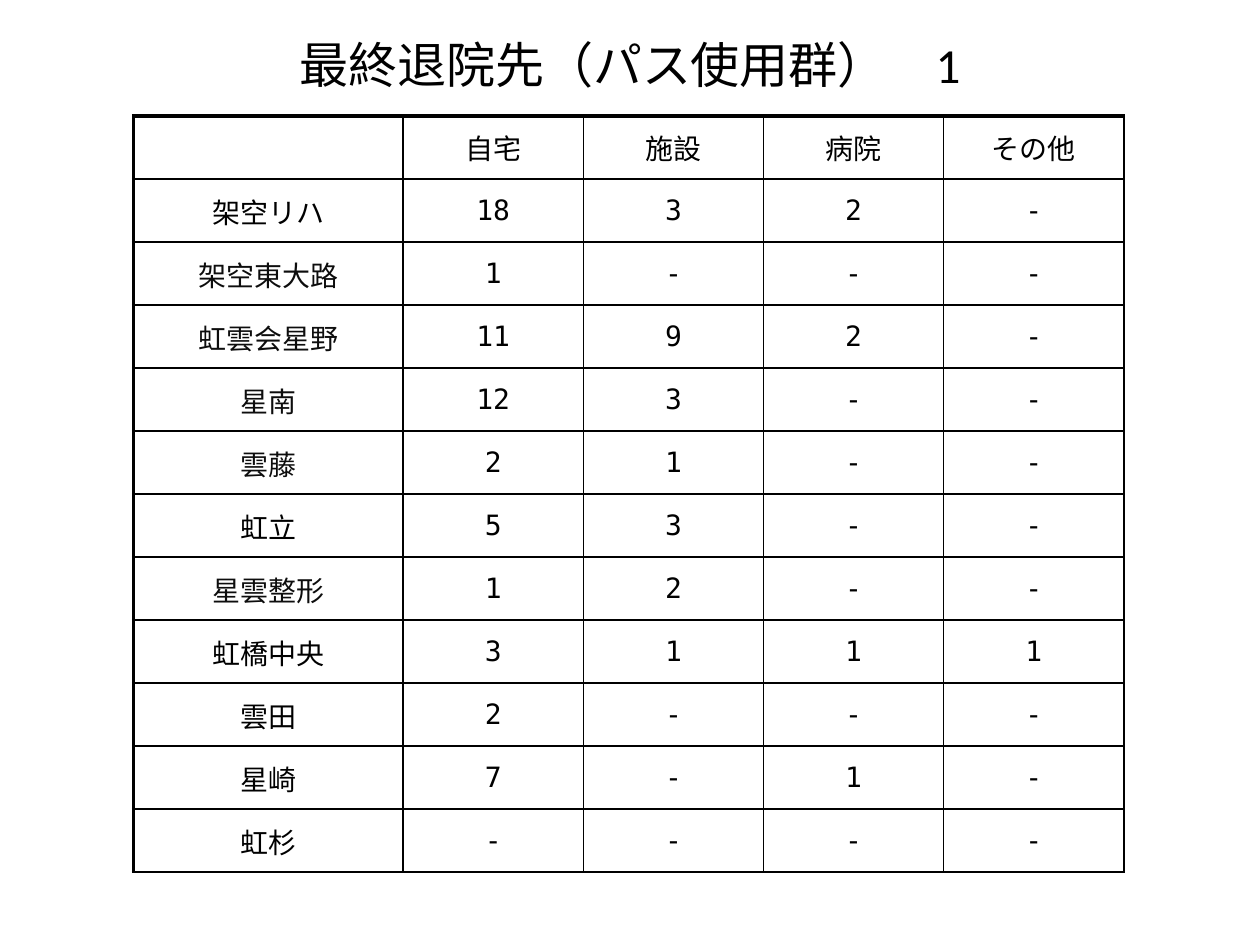
from lxml.etree import SubElement
from pptx import Presentation
from pptx.dml.color import RGBColor
from pptx.enum.text import MSO_ANCHOR as Anchor, MSO_AUTO_SIZE as AutoSize, PP_ALIGN as Align
from pptx.oxml.ns import qn
from pptx.util import Inches, Pt

BLACK, SOFT_BLACK = "000000", "0D0D0D"
THIN, THICK = 1, 2.25
TITLE = "最終退院先（パス使用群）　1"
HEADINGS = ["", "自宅", "施設", "病院", "その他"]
DISCHARGES = [
    ("架空リハ", "18", "3", "2", "-"),
    ("架空東大路", "1", "-", "-", "-"),
    ("虹雲会星野", "11", "9", "2", "-"),
    ("星南", "12", "3", "-", "-"),
    ("雲藤", "2", "1", "-", "-"),
    ("虹立", "5", "3", "-", "-"),
    ("星雲整形", "1", "2", "-", "-"),
    ("虹橋中央", "3", "1", "1", "1"),
    ("雲田", "2", "-", "-", "-"),
    ("星崎", "7", "-", "1", "-"),
    ("虹杉", "-", "-", "-", "-"),
]
SOFT_NAMES = {"架空東大路", "虹雲会星野", "星南", "雲藤", "星雲整形"}


def rgb(color):
    return RGBColor.from_string(color)


def format_paragraph(paragraph, size, font_name, color=BLACK):
    paragraph.alignment = Align.CENTER
    paragraph.font.size = Pt(size)
    paragraph.font.name = font_name
    paragraph.font.color.rgb = rgb(color)


def set_borders(cell, left, top):
    properties = cell._tc.get_or_add_tcPr()
    widths = {"a:lnL": left, "a:lnR": THIN, "a:lnT": top, "a:lnB": THIN}
    for position, (tag, width) in enumerate(widths.items()):
        line = SubElement(properties, qn(tag), w=str(Pt(width)))
        fill = SubElement(line, qn("a:solidFill"))
        SubElement(fill, qn("a:srgbClr"), val=BLACK)
        # Border lines must come before the cell fill
        properties.insert(position, line)


def add_title(slide):
    title = slide.shapes.title
    title.left, title.top = Inches(0.5), Inches(0.22)
    title.width, title.height = Inches(9), Inches(1.25)
    frame = title.text_frame
    frame.text = TITLE
    frame.auto_size = AutoSize.NONE
    frame.vertical_anchor = Anchor.TOP
    format_paragraph(frame.paragraphs[0], 28, "Calibri")


def fill_cell(cell, text, row, column):
    cell.fill.background()
    cell.vertical_anchor = Anchor.MIDDLE
    cell.text = text
    paragraph = cell.text_frame.paragraphs[0]
    is_value = row > 0 and column > 0
    format_paragraph(paragraph, 16, "DejaVu Sans Mono" if is_value else "Arial",
                     SOFT_BLACK if text in SOFT_NAMES else BLACK)
    if row == 0:
        paragraph.space_before = Pt(3.2)
    else:
        cell.margin_left = cell.margin_top = cell.margin_right = Inches(0.01)
        cell.margin_bottom = 0
    set_borders(cell, THICK if column == 0 else THIN, THICK if row == 0 else THIN)


def add_discharge_table(slide):
    rows = [HEADINGS, *DISCHARGES]
    frame = slide.shapes.add_table(len(rows), len(HEADINGS), Inches(1.06), Inches(0.92),
                                   Inches(7.86), Inches(0.5 * len(rows)))
    table = frame.table
    table.first_row = table.horz_banding = False
    for column, table_column in enumerate(table.columns):
        table_column.width = Inches(2.14 if column == 0 else 1.43)
    for row, texts in enumerate(rows):
        table.rows[row].height = Inches(0.5)
        for column, text in enumerate(texts):
            fill_cell(table.cell(row, column), text, row, column)


def main():
    presentation = Presentation()
    presentation.slide_width, presentation.slide_height = Inches(10), Inches(7.5)
    # Title Only layout
    slide = presentation.slides.add_slide(presentation.slide_layouts[5])
    add_title(slide)
    add_discharge_table(slide)
    presentation.save("out.pptx")


if __name__ == "__main__":
    main()
